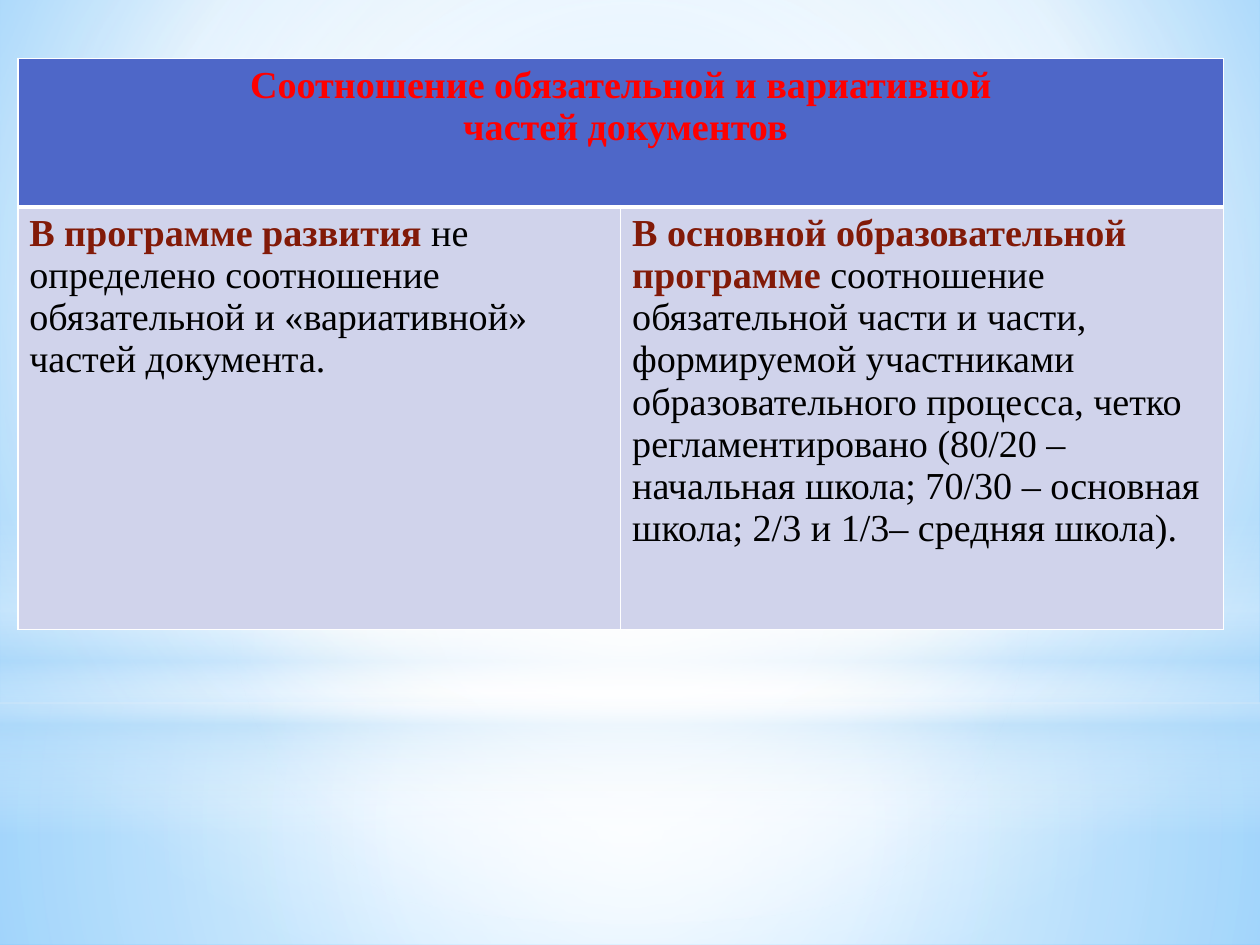
from lxml import etree
from pptx import Presentation
from pptx.dml.color import RGBColor
from pptx.enum.shapes import MSO_SHAPE
from pptx.enum.text import PP_ALIGN
from pptx.oxml.ns import qn
from pptx.util import Emu, Pt

RECT, OVAL = MSO_SHAPE.RECTANGLE, MSO_SHAPE.OVAL
CENTER, LEFT = PP_ALIGN.CENTER, PP_ALIGN.LEFT

# Content: each cell is a list of lines, each line a list of (style, text)
HEAD = [
    [("head", "Соотношение обязательной и вариативной")],
    [("head", " частей документов")],
]
BODY = [
    [[("term", "В программе развития "),
      ("text", "не определено соотношение обязательной и «вариативной» "
               "частей документа.")]],
    [[("term", "В основной образовательной программе "),
      ("text", "соотношение обязательной части и части, формируемой "
               "участниками образовательного процесса, четко "
               "регламентировано (80/20 – начальная школа; 70/30 – основная "
               "школа; 2/3 и 1/3– средняя школа).")]],
]

# Theme
THEME = {
    "font": "Times New Roman", "size": 24,
    "head": ("FF0000", True), "term": ("821A08", True),
    "text": ("000000", False),
    "bar": "4E67C8", "cell": "D0D3EB", "rule": "FFFFFF",
    "white": "FFFFFF", "haze": "B4DCFA", "sky": "9ED5FF", "deep": "5BB9FF",
}

# Gradients: stops are (position, colour, opacity) in percent
MID = (50, 50, 50, 50)
BACK = ([(0, "sky", 100), (60, "white", 100), (100, "deep", 100)],
        (20, 10, 20, 60))
GLOWS = [  # shape, box in percent of the slide, stops, focus (None: downward)
    (RECT, (0, 74.4, 100, 25.6),
     [(0, "white", 91), (37, "white", 76), (100, "haze", 79)], MID),
    (RECT, (0, 0, 100, 74.4),
     [(0, "white", 89), (48, "white", 62), (100, "haze", 79)], MID),
    (RECT, (0, 54.9, 100, 33.4),
     [(0, "white", 0), (29, "white", 30), (45, "haze", 40),
      (55, "white", 26), (65, "haze", 60), (100, "white", 0)], None),
    (OVAL, (0, 23.3, 100, 74.4),
     [(0, "white", 100), (56, "white", 0)], MID),
]

# Table place and row heights, in percent of the slide
GRID = (1.42, 6.2, 95.7, 60.4)
ROWS = (15.7, 44.7)

# Slide of 28 by 21 cm, in whole steps of 1/576 inch
deck = Presentation()
deck.slide_width, deck.slide_height = Emu(10080625), Emu(7559675)
slide = deck.slides.add_slide(deck.slide_layouts[6])


def wide(share):
    return round(deck.slide_width * share / 100)


def high(share):
    return round(deck.slide_height * share / 100)


def place(box):
    x, y, w, h = box
    return wide(x), high(y), wide(w), high(h)


def node(parent, tag, **attrs):
    return etree.SubElement(parent, qn("a:" + tag),
                            {k: str(v) for k, v in attrs.items()})


def shade(fill, root, stops, focus):
    fill.gradient()
    grad = next(root.iter(qn("a:gradFill")))
    for child in list(grad):
        grad.remove(child)
    group = node(grad, "gsLst")
    for pos, name, alpha in stops:
        stop = node(group, "gs", pos=pos * 1000)
        color = node(stop, "srgbClr", val=THEME[name])
        node(color, "alpha", val=alpha * 1000)
    if focus:
        way = node(grad, "path", path="circle")
        node(way, "fillToRect",
             **{side: part * 1000 for side, part in zip("ltrb", focus)})
    else:
        node(grad, "lin", ang=90 * 60000, scaled=0)


def write(cell, lines, align):
    frame = cell.text_frame
    for i, line in enumerate(lines):
        para = frame.add_paragraph() if i else frame.paragraphs[0]
        para.alignment = align
        para.font.name, para.font.size = THEME["font"], Pt(THEME["size"])
        for style, text in line:
            run = para.add_run()
            run.text = text
            color, bold = THEME[style]
            run.font.name, run.font.size = THEME["font"], Pt(THEME["size"])
            run.font.bold = bold
            run.font.color.rgb = RGBColor.from_string(color)


def dress(cell, color, top, foot):
    props = cell._tc.get_or_add_tcPr()
    for side, width in zip("LRTB", (1, 1, top, foot)):
        edge = node(props, "ln" + side, w=Pt(width))
        node(node(edge, "solidFill"), "srgbClr", val=THEME["rule"])
    cell.fill.solid()
    cell.fill.fore_color.rgb = RGBColor.from_string(THEME[color])


# Sky background with soft glows
shade(slide.background.fill, slide.element, *BACK)
for kind, box, stops, focus in GLOWS:
    glow = slide.shapes.add_shape(kind, *place(box))
    glow.shadow.inherit = False
    glow.line.fill.background()
    shade(glow.fill, glow.element, stops, focus)

# Table
table = slide.shapes.add_table(2, len(BODY), *place(GRID)).table
for row, share in zip(table.rows, ROWS):
    row.height = high(share)
for col, lines in enumerate(BODY):
    dress(table.cell(0, col), "bar", 1, 3)
    dress(table.cell(1, col), "cell", 3, 1)
    write(table.cell(1, col), lines, LEFT)
title = table.cell(0, 0)
title.merge(table.cell(0, len(BODY) - 1))
write(title, HEAD, CENTER)

deck.save("out.pptx")
